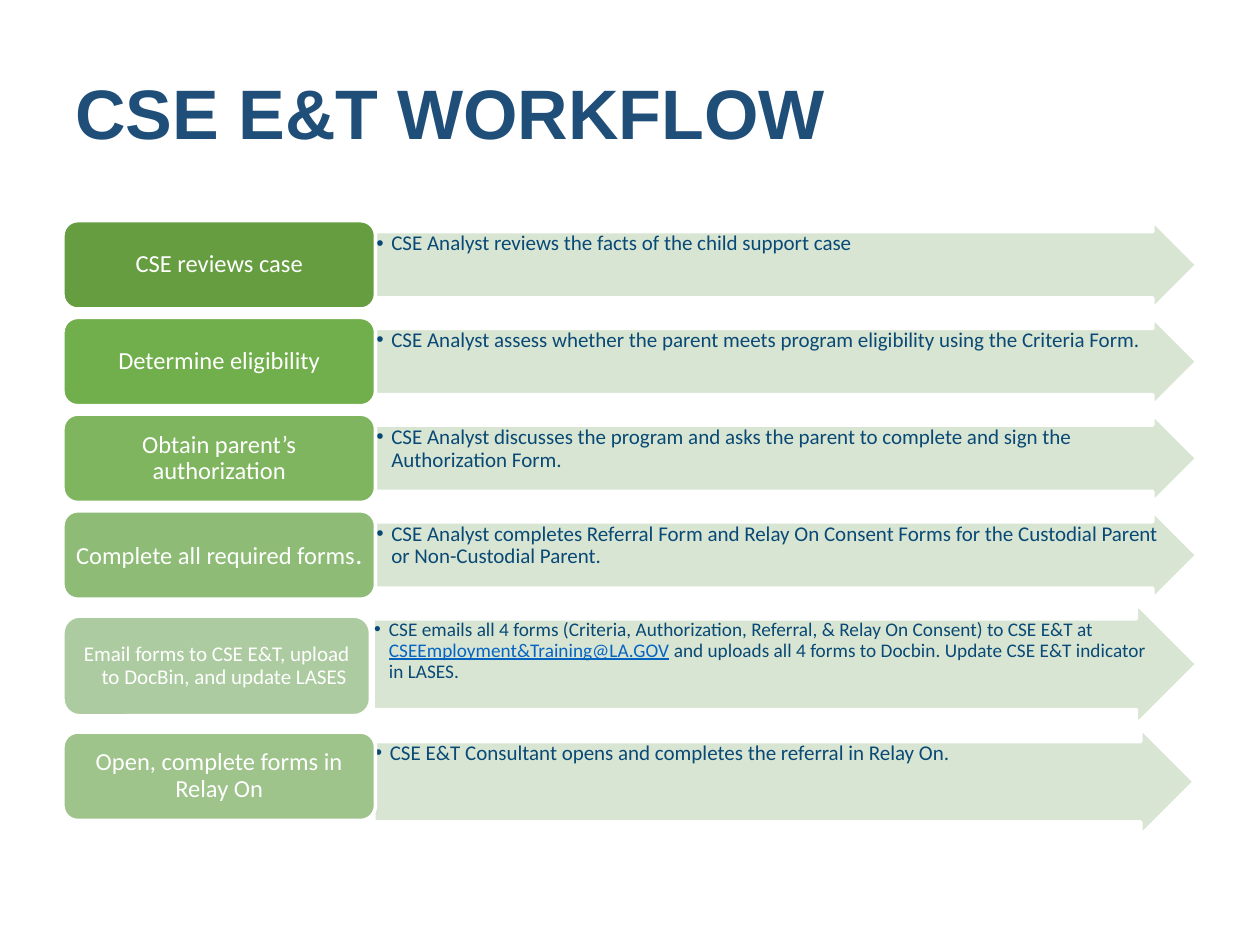
import lxml.etree
import pptx
import pptx.dml.color
import pptx.enum.shapes
import pptx.enum.text
import pptx.oxml.ns
import pptx.util

Cm = pptx.util.Cm
Pt = pptx.util.Pt
MSO_SHAPE = pptx.enum.shapes.MSO_SHAPE
ANCHOR = pptx.enum.text.MSO_ANCHOR
ALIGN = pptx.enum.text.PP_ALIGN
qn = pptx.oxml.ns.qn

COLORS = {
    "title": "1F4E79",
    "detail": "084975",
    "link": "0563C1",
    "arrow": "D5E3CF",
    "white": "FFFFFF",
}
LEFT = 1.27
TOP = 4.45
PITCH = 1.95
HANG = 0.3

LABEL_TEXT = {"size": Pt(14), "name": "Calibri", "color": COLORS["white"]}
SMALL_LABEL = {**LABEL_TEXT, "size": Pt(12)}
DETAIL_TEXT = {"size": Pt(12), "name": "Calibri", "color": COLORS["detail"]}
SMALL_DETAIL = {**DETAIL_TEXT, "size": Pt(11)}
LINK_TEXT = {**SMALL_DETAIL, "color": COLORS["link"], "underline": True}
TITLE_TEXT = {"size": Pt(40), "name": "Arial", "color": COLORS["title"], "bold": True}


def label_box(top, width=6.3, height=1.78):
    return LEFT, top, width, height


def arrow_box(top, left=7.57, width=16.56, height=1.78):
    return left, top, width, height


# Label fill, label runs, detail runs
REGULAR_STEPS = [
    ("669D40", [("CSE reviews case", LABEL_TEXT)],
     "CSE Analyst reviews the facts of the child support case"),
    ("71AE4C", [("Determine eligibility", LABEL_TEXT)],
     "CSE Analyst assess whether the parent meets program eligibility "
     "using the Criteria Form."),
    ("80B560", [("Obtain parent’s authorization", LABEL_TEXT)],
     "CSE Analyst discusses the program and asks the parent to complete "
     "and sign the Authorization Form."),
    ("8EBC76", [("Complete all required forms", LABEL_TEXT),
                (".", {**LABEL_TEXT, "size": Pt(16)})],
     "CSE Analyst completes Referral Form and Relay On Consent Forms for "
     "the Custodial Parent or Non-Custodial Parent."),
]
EMAIL_LABEL = [("Email forms to CSE E&T, upload to DocBin, and update LASES", SMALL_LABEL)]
EMAIL_DETAIL = [
    ("CSE emails all 4 forms (Criteria, Authorization, Referral, & Relay On "
     "Consent) to CSE E&T at ", SMALL_DETAIL),
    ("CSEEmployment&Training@LA.GOV", LINK_TEXT),
    (" and uploads all 4 forms to Docbin. Update CSE E&T indicator in LASES.",
     SMALL_DETAIL),
]
OPEN_LABEL = [("Open, complete forms in Relay On", LABEL_TEXT)]
OPEN_DETAIL = [("CSE E&T Consultant opens and completes the referral in Relay On.",
                DETAIL_TEXT)]


def add_block(s, kind, box, fill):
    sp = s.shapes.add_shape(kind, *map(Cm, box))
    sp.shadow.inherit = False
    sp.fill.solid()
    sp.fill.fore_color.rgb = pptx.dml.color.RGBColor.from_string(fill)
    sp.line.color.rgb = pptx.dml.color.RGBColor.from_string(COLORS["white"])
    sp.line.width = Pt(2)
    return sp


def add_text(s, box, runs, insets, anchor, **paragraph):
    """Add a one-paragraph text box; insets are horizontal and vertical."""
    tf = s.shapes.add_textbox(*map(Cm, box)).text_frame
    tf.word_wrap = True
    tf.vertical_anchor = anchor
    tf.margin_left = tf.margin_right = Cm(insets[0])
    tf.margin_top = tf.margin_bottom = Cm(insets[1])
    p = tf.paragraphs[0]
    for key, value in paragraph.items():
        setattr(p, key, value)
    for text, fmt in runs:
        r = p.add_run()
        r.text = text
        for key, value in fmt.items():
            if key == "color":
                r.font.color.rgb = pptx.dml.color.RGBColor.from_string(value)
            else:
                setattr(r.font, key, value)
    return p


def set_hanging(p):
    pPr = p._p.get_or_add_pPr()
    pPr.set("marL", str(Cm(HANG)))
    pPr.set("indent", str(-Cm(HANG)))
    return pPr


def add_label(s, box, fill, runs):
    left, top, width, height = box
    add_block(s, MSO_SHAPE.ROUNDED_RECTANGLE, box, fill)
    pad = 0.09
    inner = (left + pad, top + pad, width - 2 * pad, height - 2 * pad)
    return add_text(s, inner, runs, (0.14, 0.07), ANCHOR.MIDDLE,
                    alignment=ALIGN.CENTER, line_spacing=0.9, space_after=Pt(5))


def add_detail(s, box, runs):
    """Add a translucent arrow with a bulleted text inside its shaft."""
    left, top, width, height = box
    sp = add_block(s, MSO_SHAPE.RIGHT_ARROW, box, COLORS["arrow"])
    sp.adjustments[0] = 0.75
    sp.adjustments[1] = 0.5
    color = sp._element.spPr.find(qn("a:solidFill")).find(qn("a:srgbClr"))
    lxml.etree.SubElement(color, qn("a:alpha"), val="90000")
    # The shaft is 3/4 of the height; the text reaches 3/4 into the head.
    inner = (left, top + height / 8, width - height * 0.375, height * 0.75)
    p = add_text(s, inner, runs, (0.02, 0.02), ANCHOR.TOP,
                 level=1, alignment=ALIGN.LEFT, line_spacing=0.9, space_after=Pt(2))
    pPr = set_hanging(p)
    lxml.etree.SubElement(pPr, qn("a:buFont"), typeface="Arial")
    lxml.etree.SubElement(pPr, qn("a:buChar"), char="•")


def main():
    prs = pptx.Presentation()
    prs.slide_width, prs.slide_height = Cm(25.4), Cm(19.05)
    s = prs.slides.add_slide(prs.slide_layouts[6])

    add_text(s, (1.27, 0.76, 22.86, 3.18), [("CSE E&T WORKFLOW", TITLE_TEXT)],
             (0.25, 0.13), ANCHOR.MIDDLE, line_spacing=0.9)

    for i, (fill, label, detail) in enumerate(REGULAR_STEPS):
        top = TOP + i * PITCH
        add_detail(s, arrow_box(top), [(detail, DETAIL_TEXT)])
        add_label(s, label_box(top), fill, label)

    add_detail(s, arrow_box(12.17, 7.52, 16.61, 2.44), EMAIL_DETAIL)
    set_hanging(add_label(s, label_box(12.42, 6.2, 2.01), "ADCBA0", EMAIL_LABEL))

    add_detail(s, arrow_box(14.68, 7.54, 16.54, 2.16), OPEN_DETAIL)
    add_label(s, label_box(14.76), "9EC38B", OPEN_LABEL)

    prs.save("out.pptx")


if __name__ == "__main__":
    main()
